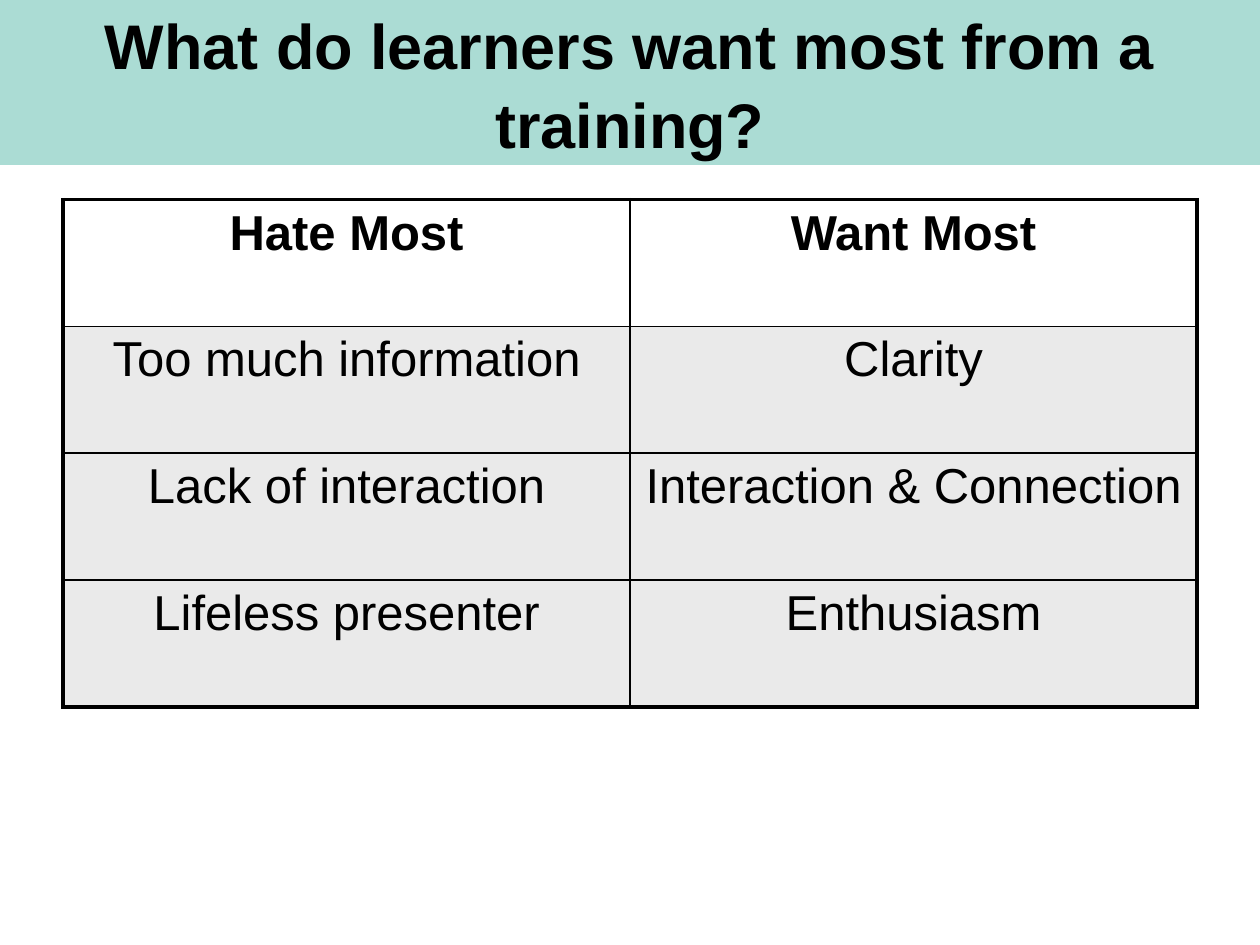
from dataclasses import dataclass

from lxml import etree
from pptx import Presentation
from pptx.dml.color import RGBColor
from pptx.enum.shapes import MSO_SHAPE
from pptx.enum.text import MSO_ANCHOR, PP_ALIGN
from pptx.oxml.ns import qn
from pptx.util import Pt

RECTANGLE = MSO_SHAPE.RECTANGLE
CENTER = PP_ALIGN.CENTER
MIDDLE = MSO_ANCHOR.MIDDLE


@dataclass(frozen=True)
class Theme:
    font: str = "Arial"
    ink: str = "000000"
    band: str = "ABDCD4"
    header: str = "FFFFFF"
    body: str = "EAEAEA"
    title_size: float = 36
    table_size: float = 28
    outer_line: float = 2.25
    inner_line: float = 1


THEME = Theme()


def write_centered(frame, text, size, bold):
    paragraph = frame.paragraphs[0]
    paragraph.alignment = CENTER
    run = paragraph.add_run()
    run.text = text
    run.font.name = THEME.font
    run.font.size = Pt(size)
    run.font.bold = bold
    run.font.color.rgb = RGBColor.from_string(THEME.ink)
    return paragraph


def set_borders(cell, outer_sides):
    """Draw all four borders, heavier on the table's outer sides."""
    properties = cell._tc.get_or_add_tcPr()
    for position, side in enumerate(("L", "R", "T", "B")):
        width = THEME.outer_line if side in outer_sides else THEME.inner_line
        line = etree.Element(qn(f"a:ln{side}"), w=str(Pt(width)))
        fill = etree.SubElement(line, qn("a:solidFill"))
        etree.SubElement(fill, qn("a:srgbClr"), val=THEME.ink)
        properties.insert(position, line)


presentation = Presentation()
presentation.slide_width = Pt(720)
presentation.slide_height = Pt(540)
slide = presentation.slides.add_slide(presentation.slide_layouts[6])

# Comparison table
comparison = [
    ("Hate Most", "Want Most"),
    ("Too much information", "Clarity"),
    ("Lack of interaction", "Interaction & Connection"),
    ("Lifeless presenter", "Enthusiasm"),
]
last_row = len(comparison) - 1
row_height = 72.5
table = slide.shapes.add_table(
    len(comparison), 2, Pt(36), Pt(114), Pt(648), Pt(row_height * len(comparison))
).table

for row, answers in enumerate(comparison):
    is_header = row == 0
    for column, answer in enumerate(answers):
        cell = table.cell(row, column)
        cell.fill.solid()
        cell.fill.fore_color.rgb = RGBColor.from_string(
            THEME.header if is_header else THEME.body
        )
        write_centered(cell.text_frame, answer, THEME.table_size, is_header)
        outer_sides = "LR"[column]
        if is_header:
            outer_sides += "T"
        if row == last_row:
            outer_sides += "B"
        set_borders(cell, outer_sides)

# Title band
title_band = slide.shapes.add_shape(RECTANGLE, Pt(0), Pt(0), Pt(720), Pt(94.3))
title_band.shadow.inherit = False
title_band.fill.solid()
title_band.fill.fore_color.rgb = RGBColor.from_string(THEME.band)
title_band.line.fill.background()
title_band.text_frame.word_wrap = True
title_band.text_frame.vertical_anchor = MIDDLE
title = write_centered(
    title_band.text_frame,
    "What do learners want most from a training?",
    THEME.title_size,
    True,
)
title.line_spacing = 1.04

presentation.save("out.pptx")
